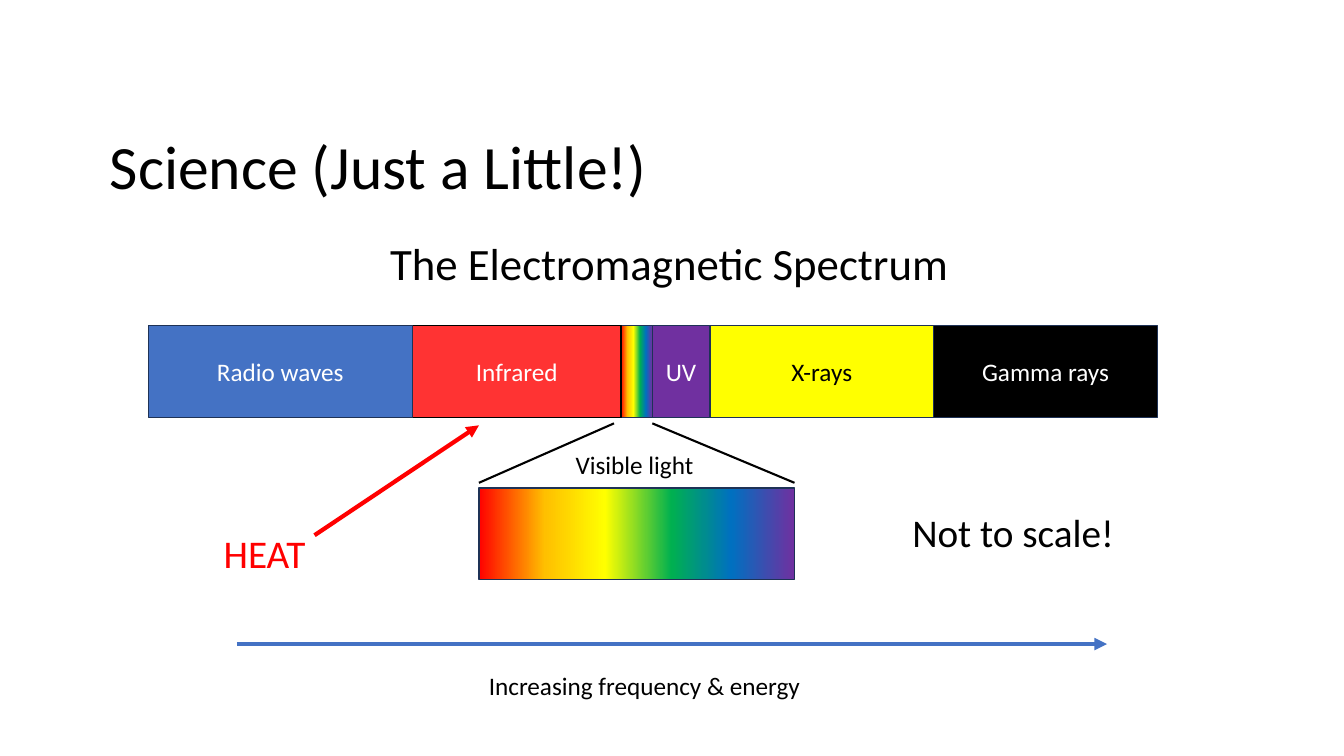
from lxml import etree
from pptx import Presentation
from pptx.dml.color import RGBColor
from pptx.enum.shapes import MSO_CONNECTOR, MSO_SHAPE
from pptx.enum.text import MSO_ANCHOR, MSO_AUTO_SIZE, PP_ALIGN
from pptx.oxml.ns import qn
from pptx.util import Inches, Pt

RECTANGLE = MSO_SHAPE.RECTANGLE
STRAIGHT = MSO_CONNECTOR.STRAIGHT
LEFT, CENTER = PP_ALIGN.LEFT, PP_ALIGN.CENTER
MIDDLE, TOP = MSO_ANCHOR.MIDDLE, MSO_ANCHOR.TOP
NO_AUTOFIT, GROW = MSO_AUTO_SIZE.NONE, MSO_AUTO_SIZE.SHAPE_TO_FIT_TEXT

BLACK, WHITE, RED, BLUE, VIOLET = "000000", "FFFFFF", "FF0000", "4472C4", "7030A0"
OUTLINE = "1E3256"
RAINBOW = [(0, RED), (21, "FFC000"), (40, "FFFF00"),
           (61, "00B050"), (80, "0070C0"), (100, VIOLET)]


def rgb(color):
    return RGBColor.from_string(color)


class SpectrumSlide:
    font = "Calibri"

    def __init__(self, presentation):
        self.slide = presentation.slides.add_slide(presentation.slide_layouts[5])

    def set_text(self, shape, text, size, color, align=LEFT, anchor=TOP):
        frame = shape.text_frame
        frame.text = text
        frame.vertical_anchor = anchor
        paragraph = frame.paragraphs[0]
        paragraph.alignment = align
        font = paragraph.runs[0].font
        font.name, font.size = self.font, Pt(size)
        font.color.rgb = rgb(color)
        return frame

    def title(self, text, left, top, width, height):
        shape = self.slide.shapes.title
        shape.left, shape.top = Inches(left), Inches(top)
        shape.width, shape.height = Inches(width), Inches(height)
        frame = self.set_text(shape, text, 44, BLACK, anchor=MIDDLE)
        frame.auto_size = NO_AUTOFIT
        frame.paragraphs[0].line_spacing = 0.9

    def label(self, text, left, top, width, height, size, color=BLACK, wrap=True):
        box = self.slide.shapes.add_textbox(
            Inches(left), Inches(top), Inches(width), Inches(height))
        frame = self.set_text(box, text, size, color)
        frame.word_wrap = wrap
        frame.auto_size = GROW

    def band(self, left, top, width, height, fill, text="", color=WHITE,
             outline=OUTLINE, opacity=100):
        """Draw a rectangle; a list of stops as fill gives a gradient."""
        shape = self.slide.shapes.add_shape(
            RECTANGLE, Inches(left), Inches(top), Inches(width), Inches(height))
        shape.shadow.inherit = False
        if isinstance(fill, list):
            self.gradient(shape, fill)
        else:
            shape.fill.solid()
            shape.fill.fore_color.rgb = rgb(fill)
            if opacity < 100:
                tint = shape._element.spPr.find(qn("a:solidFill")).find(qn("a:srgbClr"))
                etree.SubElement(tint, qn("a:alpha"), val=str(opacity * 1000))
        shape.line.color.rgb = rgb(outline)
        shape.line.width = Pt(1)
        if text:
            self.set_text(shape, text, 18, color, CENTER, MIDDLE)

    def gradient(self, shape, stops):
        shape.fill.gradient()
        shape.fill.gradient_angle = 0
        stop_list = shape._element.spPr.find(".//" + qn("a:gsLst"))
        for old_stop in list(stop_list):
            stop_list.remove(old_stop)
        for position, color in stops:
            stop = etree.SubElement(stop_list, qn("a:gs"), pos=str(position * 1000))
            etree.SubElement(stop, qn("a:srgbClr"), val=color)

    def line(self, start, end, color, width, arrow=False):
        connector = self.slide.shapes.add_connector(
            STRAIGHT, *(Inches(value) for value in (*start, *end)))
        connector.line.color.rgb = rgb(color)
        connector.line.width = Pt(width)
        properties = connector._element.spPr
        if arrow:
            etree.SubElement(properties.find(qn("a:ln")), qn("a:tailEnd"),
                             type="triangle")
        etree.SubElement(properties, qn("a:effectLst"))


def main():
    presentation = Presentation()
    presentation.slide_width, presentation.slide_height = Inches(13.33), Inches(7.5)
    page = SpectrumSlide(presentation)

    # Headings
    page.title("Science (Just a Little!)", 0.99, 1.07, 11.5, 1.22)
    page.label("The Electromagnetic Spectrum", 3.77, 2.29, 5.8, 0.64, 32, wrap=False)

    # Spectrum bar, laid from right to left so each band overlaps the next
    bands = [
        (2.22, BLACK, "Gamma rays", {}),
        (2.22, "FFFF00", "X-rays", {"color": BLACK}),
        (0.57, VIOLET, "UV", {}),
        (0.31, RAINBOW, "", {}),
        (2.07, RED, "Infrared", {"outline": BLACK, "opacity": 80}),
        (2.62, BLUE, "Radio waves", {}),
    ]
    left = 11.48
    for width, fill, text, style in bands:
        left -= width
        page.band(left, 3.23, width, 0.91, fill, text, **style)

    # Enlarged visible light
    page.band(4.75, 4.84, 3.13, 0.91, RAINBOW)
    for top_x, bottom_x in ((6.09, 4.75), (6.47, 7.88)):
        page.line((top_x, 4.2), (bottom_x, 4.79), BLACK, 1.5)
    page.label("Visible light", 5.61, 4.41, 1.38, 0.4, 18, wrap=False)

    # Heat pointer and remark
    page.label("HEAT", 2.12, 5.2, 1.06, 0.57, 28, RED)
    page.line((3.12, 5.31), (4.75, 4.22), RED, 3, arrow=True)
    page.label("Not to scale!", 8.95, 4.99, 2.52, 0.57, 28)

    # Frequency axis
    page.line((2.35, 6.39), (10.98, 6.39), BLUE, 3, arrow=True)
    page.label("Increasing frequency & energy", 4.75, 6.6, 3.44, 0.4, 18)

    presentation.save("out.pptx")


if __name__ == "__main__":
    main()
